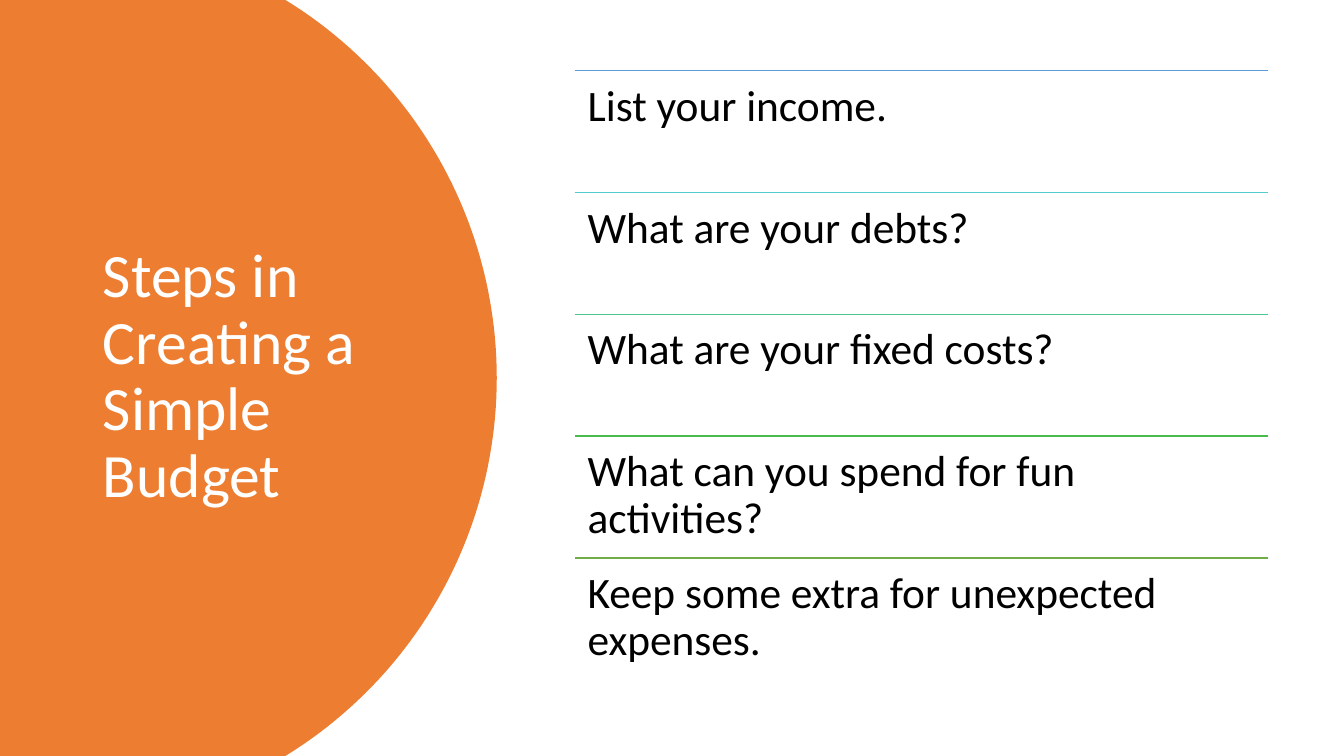
import math

import lxml.etree
import pptx
import pptx.dml.color
import pptx.enum.shapes
import pptx.enum.text
import pptx.oxml.ns
import pptx.util

Cm = pptx.util.Cm
Pt = pptx.util.Pt

HEADING = "Steps in Creating a Simple Budget"
STEPS = [
    ("List your income.", "blue"),
    ("What are your debts?", "teal"),
    ("What are your fixed costs?", "mint"),
    ("What can you spend for fun activities?", "green"),
    ("Keep some extra for unexpected expenses.", "olive"),
]
COLOURS = {
    "orange": "ED7D31",
    "white": "FFFFFF",
    "black": "000000",
    "blue": "5B9BD5",
    "teal": "54CCCD",
    "mint": "4DC58D",
    "green": "48BB4F",
    "olive": "70AD47",
}
FONT = "Calibri"

SLIDE_WIDTH, SLIDE_HEIGHT = 33.87, 19.05
DISC_EDGE, DISC_RADIUS = 12.52, 11.18
ARC_SEGMENTS = 90
STEPS_LEFT, STEPS_TOP, STEPS_WIDTH, STEP_HEIGHT = 14.48, 1.78, 17.47, 3.07
STEP_INSET = 0.33


def colour(name):
    return pptx.dml.color.RGBColor.from_string(COLOURS[name])


def write(frame, text, size, ink, anchor, space_after=0, inset=None):
    frame.word_wrap = True
    frame.auto_size = pptx.enum.text.MSO_AUTO_SIZE.NONE
    frame.vertical_anchor = anchor
    if inset is not None:
        frame.margin_left = frame.margin_right = Cm(inset)
        frame.margin_top = frame.margin_bottom = Cm(inset)
    paragraph = frame.paragraphs[0]
    paragraph.alignment = pptx.enum.text.PP_ALIGN.LEFT
    paragraph.line_spacing = 0.9
    paragraph.space_after = Pt(space_after)
    run = paragraph.add_run()
    run.text = text
    run.font.size = Pt(size)
    run.font.name = FONT
    run.font.color.rgb = colour(ink)


def add_disc(slide):
    middle = SLIDE_HEIGHT / 2
    centre = DISC_EDGE - DISC_RADIUS
    reach = math.asin(middle / DISC_RADIUS)
    angles = [reach * (2 * i / ARC_SEGMENTS - 1) for i in range(ARC_SEGMENTS + 1)]
    arc = [
        (Cm(centre + DISC_RADIUS * math.cos(a)), Cm(middle + DISC_RADIUS * math.sin(a)))
        for a in angles
    ]
    builder = slide.shapes.build_freeform(0, 0)
    builder.add_line_segments(arc + [(0, Cm(SLIDE_HEIGHT))], close=True)
    disc = builder.convert_to_shape()
    disc.shadow.inherit = False
    disc.fill.solid()
    disc.fill.fore_color.rgb = colour("orange")
    disc.line.fill.background()


def add_heading(slide):
    heading = slide.shapes.title
    heading.left, heading.top = Cm(2.34), Cm(1.78)
    heading.width, heading.height = Cm(8.2), Cm(15.47)
    write(heading.text_frame, HEADING, 44, "white", pptx.enum.text.MSO_ANCHOR.MIDDLE)
    heading.element.getparent().append(heading.element)


def add_step(slide, index, text, rule_colour):
    left, width = Cm(STEPS_LEFT), Cm(STEPS_WIDTH)
    top = Cm(STEPS_TOP + index * STEP_HEIGHT)
    rule = slide.shapes.add_connector(
        pptx.enum.shapes.MSO_CONNECTOR.STRAIGHT, left, top, left + width, top
    )
    rule.line.color.rgb = colour(rule_colour)
    rule.line.width = Pt(1)
    lxml.etree.SubElement(rule.element.spPr, pptx.oxml.ns.qn("a:effectLst"))
    step = slide.shapes.add_textbox(left, top, width, Cm(STEP_HEIGHT))
    write(step.text_frame, text, 31, "black", pptx.enum.text.MSO_ANCHOR.TOP,
          space_after=11, inset=STEP_INSET)


def main():
    deck = pptx.Presentation()
    deck.slide_width, deck.slide_height = Cm(SLIDE_WIDTH), Cm(SLIDE_HEIGHT)
    slide = deck.slides.add_slide(deck.slide_layouts[5])
    add_disc(slide)
    add_heading(slide)
    for index, (text, rule_colour) in enumerate(STEPS):
        add_step(slide, index, text, rule_colour)
    deck.save("out.pptx")


if __name__ == "__main__":
    main()
